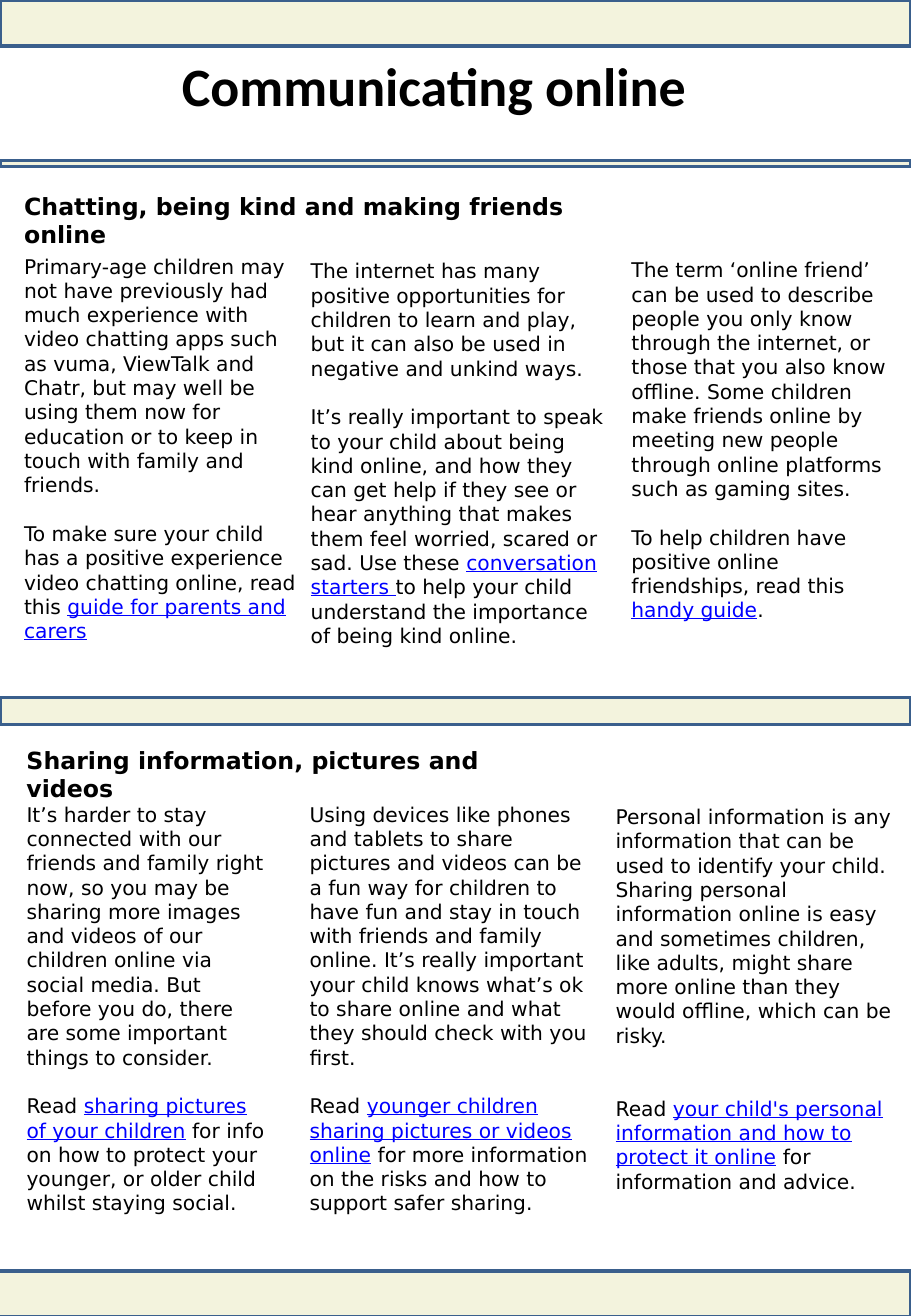
from pptx import Presentation
from pptx.dml.color import RGBColor
from pptx.enum.shapes import MSO_SHAPE
from pptx.enum.text import PP_ALIGN
from pptx.util import Pt

PX = 9144
PAGE_WIDTH, PAGE_HEIGHT = 750, 1083
BODY_FONT, TITLE_FONT = "DejaVu Sans", "Calibri"
BLACK, LINK, CREAM, BLUE = "000000", "0000FF", "F3F3DD", "3A5F8C"
LINE_GAP = 14.4

BANDS = [(0, 0, 750, 38), (0, 132, 750, 5), (0, 574, 750, 22), (-2, 1046, 752, 38)]

CHATTING = [
    ((0, 51, 247, 333), 1,
     "Primary-age children may not have previously had much experience with video "
     "chatting apps such as vuma, ViewTalk and Chatr, but may well be using them now "
     "for education or to keep in touch with family and friends.",
     ("To make sure your child has a positive experience video chatting online, read this ",
      "guide for parents and carers", "")),
    ((236, 55, 263, 333), 1,
     "The internet has many positive opportunities for children to learn and play, but "
     "it can also be used in negative and unkind ways.",
     ("It’s really important to speak to your child about being kind online, and how they "
      "can get help if they see or hear anything that makes them feel worried, scared or "
      "sad. Use these ",
      "conversation starters ",
      "to help your child understand the importance of being kind online.")),
    ((500, 54, 238, 313), 1,
     "The term ‘online friend’ can be used to describe people you only know through the "
     "internet, or those that you also know offline. Some children make friends online by "
     "meeting new people through online platforms such as gaming sites.",
     ("To help children have positive online friendships, read this ", "handy guide", ".")),
]

SHARING = [
    ((0, 46, 219, 353), 1,
     "It’s harder to stay connected with our friends and family right now, so you may be "
     "sharing more images and videos of our children online via social media. But before "
     "you do, there are some important things to consider.",
     ("Read ", "sharing pictures of your children",
      " for info on how to protect your younger, or older child whilst staying social.")),
    ((233, 46, 252, 353), 1,
     "Using devices like phones and tablets to share pictures and videos can be a fun way "
     "for children to have fun and stay in touch with friends and family online. It’s "
     "really important your child knows what’s ok to share online and what they should "
     "check with you first.",
     ("Read ", "younger children sharing pictures or videos online",
      " for more information on the risks and how to support safer sharing.")),
    ((485, 48, 247, 333), 2,
     "Personal information is any information that can be used to identify your child. "
     "Sharing personal information online is easy and sometimes children, like adults, "
     "might share more online than they would offline, which can be risky.",
     ("Read ", "your child's personal information and how to protect it online",
      " for information and advice.")),
]


def color(value):
    return RGBColor.from_string(value)


def scaled(box):
    return [length * PX for length in box]


def add_text_box(slide, box):
    frame = slide.shapes.add_textbox(*scaled(box)).text_frame
    frame.word_wrap = True
    return frame


def add_run(paragraph, text, size=12, name=BODY_FONT, bold=False, link=False):
    run = paragraph.add_run()
    run.text = text
    run.font.name = name
    run.font.size = Pt(size)
    run.font.bold = bold
    run.font.underline = link
    run.font.color.rgb = color(LINK if link else BLACK)


def add_band(slide, box):
    shape = slide.shapes.add_shape(MSO_SHAPE.RECTANGLE, *scaled(box))
    shape.shadow.inherit = False
    shape.fill.solid()
    shape.fill.fore_color.rgb = color(CREAM)
    shape.line.color.rgb = color(BLUE)
    shape.line.width = Pt(2)


def add_title(slide, box, text):
    paragraph = add_text_box(slide, box).paragraphs[0]
    paragraph.alignment = PP_ALIGN.CENTER
    add_run(paragraph, text, 32, TITLE_FONT, bold=True)


def add_column(slide, box, gap_lines, opening, closing):
    frame = add_text_box(slide, box)
    add_run(frame.paragraphs[0], opening)
    paragraph = frame.add_paragraph()
    paragraph.space_before = Pt(gap_lines * LINE_GAP)
    for index, text in enumerate(closing):
        if text:
            add_run(paragraph, text, link=index == 1)


def add_section(slide, box, heading, columns):
    left, top, width, height = box
    frame = add_text_box(slide, box)
    add_run(frame.paragraphs[0], heading, 14, bold=True)
    for (x, y, column_width, column_height), gap_lines, opening, closing in columns:
        column_box = (left + x, top + y, column_width, column_height)
        add_column(slide, column_box, gap_lines, opening, closing)


def main():
    presentation = Presentation()
    presentation.slide_width = PAGE_WIDTH * PX
    presentation.slide_height = PAGE_HEIGHT * PX
    slide = presentation.slides.add_slide(presentation.slide_layouts[6])
    for band in BANDS:
        add_band(slide, band)
    add_title(slide, (134, 38, 447, 64), "Communicating online")
    add_section(slide, (10, 153, 536, 34),
                "Chatting, being kind and making friends online", CHATTING)
    add_section(slide, (12, 609, 470, 34),
                "Sharing information, pictures and videos", SHARING)
    presentation.save("out.pptx")


if __name__ == "__main__":
    main()
